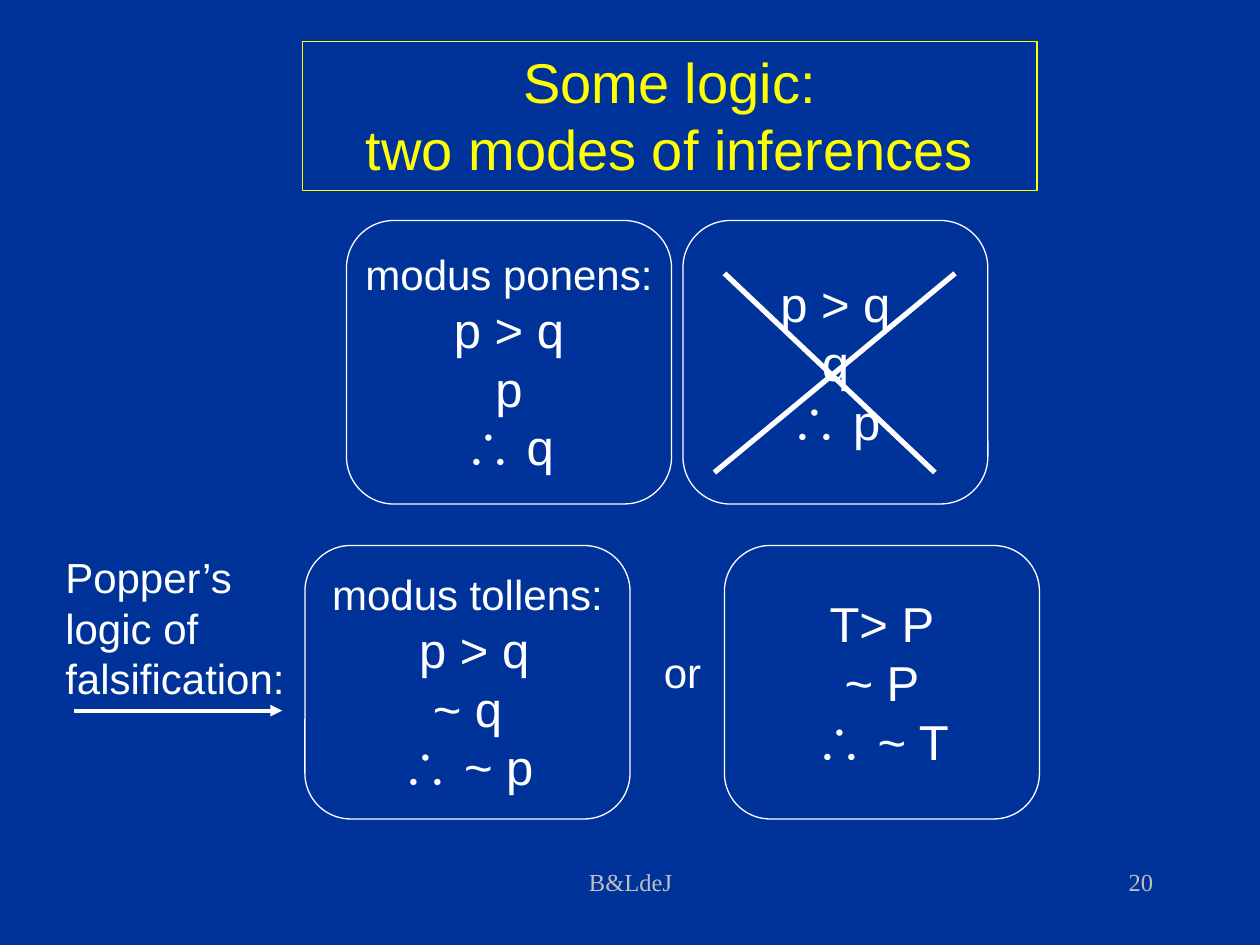
from lxml.etree import SubElement
from pptx import Presentation
from pptx.dml.color import RGBColor
from pptx.enum.shapes import MSO_CONNECTOR, MSO_SHAPE
from pptx.enum.text import MSO_ANCHOR, PP_ALIGN
from pptx.oxml.ns import qn
from pptx.util import Inches, Pt

COLORS = {"back": "003399", "main": "FFFFFF", "title": "FFFF00", "foot": "BFBFBF"}


def color(name):
    return RGBColor.from_string(COLORS[name])


def write(shape, lines, align, tone="main", font="Arial", wrap=True,
          anchor=MSO_ANCHOR.TOP):
    """Fill a shape with (text, size) lines, one paragraph each."""
    frame = shape.text_frame
    frame.word_wrap = wrap
    frame.vertical_anchor = anchor
    for i, (text, size) in enumerate(lines):
        para = frame.add_paragraph() if i else frame.paragraphs[0]
        para.text = text
        para.alignment = align
        para.font.size = Pt(size)
        para.font.name = font
        para.font.color.rgb = color(tone)


def add_label(slide, box, lines, align=PP_ALIGN.LEFT, **style):
    shape = slide.shapes.add_textbox(*map(Inches, box))
    write(shape, lines, align, **style)


def add_frame(slide, kind, box, lines, tone="main", **style):
    """Add an unfilled outlined shape with centred text."""
    shape = slide.shapes.add_shape(kind, *map(Inches, box))
    shape.shadow.inherit = False
    shape.fill.background()
    shape.line.color.rgb = color(tone)
    shape.line.width = Pt(0.75)
    write(shape, lines, PP_ALIGN.CENTER, tone, **style)
    return shape


def add_card(slide, box, rules, head=None):
    lines = [(head, 24)] if head else []
    lines += [(rule, 28) for rule in rules]
    card = add_frame(slide, MSO_SHAPE.ROUNDED_RECTANGLE, box, lines,
                     wrap=False, anchor=MSO_ANCHOR.MIDDLE)
    card.adjustments[0] = 0.167


def add_line(slide, start, end, width, arrow=False):
    line = slide.shapes.add_connector(
        MSO_CONNECTOR.STRAIGHT, *map(Inches, start + end))
    line.line.color.rgb = color("main")
    line.line.width = Pt(width)
    if arrow:
        SubElement(line.line._get_or_add_ln(), qn("a:tailEnd"), type="triangle")
    SubElement(line._element.spPr, qn("a:effectLst"))


def main():
    deck = Presentation()
    deck.slide_width, deck.slide_height = Inches(10), Inches(7.5)
    slide = deck.slides.add_slide(deck.slide_layouts[6])
    slide.background.fill.solid()
    slide.background.fill.fore_color.rgb = color("back")

    foot = {"tone": "foot", "font": "Times New Roman"}
    add_label(slide, (3.42, 6.83, 3.17, 0.5), [("B&LdeJ", 14)],
              PP_ALIGN.CENTER, **foot)
    add_label(slide, (7.17, 6.83, 2.08, 0.5), [("20", 14)],
              PP_ALIGN.RIGHT, **foot)

    add_frame(slide, MSO_SHAPE.RECTANGLE, (2.4, 0.33, 5.83, 1.18),
              [("Some logic:", 32), ("two modes of inferences", 32)], "title")

    add_card(slide, (2.75, 1.75, 2.58, 2.25), ["p > q", "p", "∴ q"],
             "modus ponens:")
    add_card(slide, (5.42, 1.75, 2.42, 2.25), ["p > q", "q", "∴ p"])
    add_line(slide, (7.58, 2.17), (5.67, 3.75), 3)
    add_line(slide, (5.75, 2.17), (7.42, 3.75), 3)

    add_card(slide, (2.42, 4.33, 2.58, 2.17), [" p > q", "~ q", "∴ ~ p"],
             "modus tollens:")
    add_card(slide, (5.75, 4.33, 2.5, 2.17), ["T> P", "~ P", "∴ ~ T"])
    add_label(slide, (5.17, 5.08, 0.5, 0.5), [("or", 24)], wrap=False)

    note = ["Popper’s", "logic of", "falsification:"]
    add_label(slide, (0.42, 4.33, 1.94, 1.3), [(text, 24) for text in note],
              wrap=False)
    add_line(slide, (0.59, 5.64), (2.24, 5.64), 2.25, arrow=True)

    deck.save("out.pptx")


if __name__ == "__main__":
    main()
